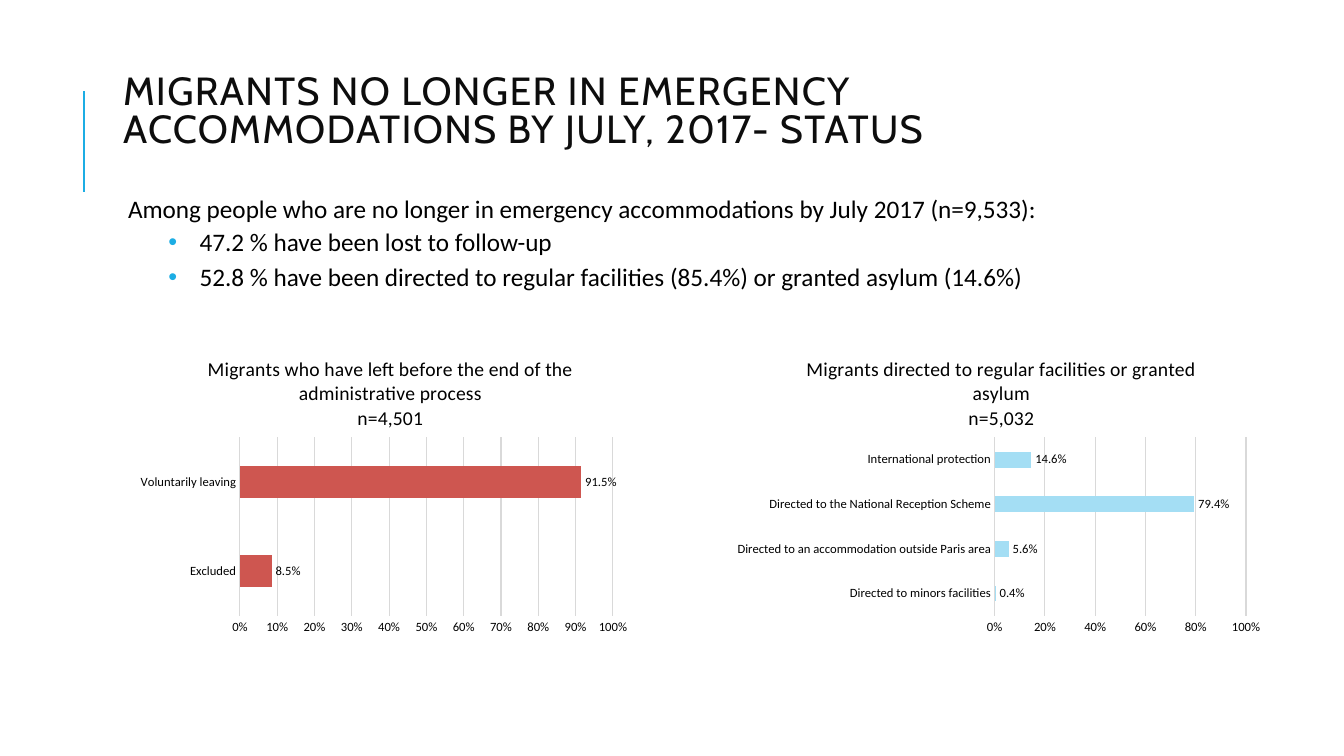
from lxml import etree
from pptx import Presentation
from pptx.chart.data import CategoryChartData
from pptx.dml.color import RGBColor
from pptx.enum.chart import XL_CHART_TYPE, XL_LABEL_POSITION, XL_TICK_MARK
from pptx.enum.shapes import MSO_CONNECTOR
from pptx.enum.text import MSO_ANCHOR, PP_ALIGN
from pptx.oxml import parse_xml
from pptx.oxml.ns import nsdecls, qn
from pptx.util import Inches, Pt

BAR = XL_CHART_TYPE.BAR_CLUSTERED
OUTSIDE = XL_LABEL_POSITION.OUTSIDE_END
NO_TICK = XL_TICK_MARK.NONE
STRAIGHT = MSO_CONNECTOR.STRAIGHT
MIDDLE = MSO_ANCHOR.MIDDLE
LEFT = PP_ALIGN.LEFT

BLACK = RGBColor(0x00, 0x00, 0x00)
INK = RGBColor(0x0D, 0x0D, 0x0D)
BLUE = RGBColor(0x1C, 0xAD, 0xE4)
GREY = RGBColor(0xD9, 0xD9, 0xD9)
RED = RGBColor(0xCE, 0x56, 0x50)
SKY = RGBColor(0xA4, 0xDE, 0xF4)


def style(font, size, color=BLACK, name="Calibri"):
    for key, value in {"size": Pt(size), "name": name, "bold": False}.items():
        setattr(font, key, value)
    font.color.rgb = color


def place(parent, **spots):
    """Set a manual layout, in fractions of the chart."""
    old = parent.find(qn("c:layout"))
    if old is not None:
        parent.remove(old)
    layout = parse_xml(f"<c:layout {nsdecls('c')}><c:manualLayout/></c:layout>")
    for tag, value in spots.items():
        etree.SubElement(layout[0], qn(f"c:{tag}")).set("val", str(value))
    text = parent.find(qn("c:tx"))
    parent.insert(0 if text is None else 1, layout)


prs = Presentation()
prs.slide_width, prs.slide_height = Inches(13.33), Inches(7.5)
slide = prs.slides.add_slide(prs.slide_layouts[5])

# Accent line beside the title
rule = slide.shapes.add_connector(
    STRAIGHT, Inches(0.83), Inches(1.9), Inches(0.83), Inches(0.9))
rule.line.color.rgb = BLUE
rule.line.width = Pt(1.5)
etree.SubElement(rule._element.spPr, qn("a:effectLst"))

# Title
title = slide.shapes.title
title.left, title.top = Inches(1.12), Inches(0.64)
title.width, title.height = Inches(11.12), Inches(0.96)
title.text_frame.text = "MIGRANTS NO LONGER IN EMERGENCY ACCOMMODATIONS BY JULY, 2017- STATUS"
title.text_frame.vertical_anchor = MIDDLE
head = title.text_frame.paragraphs[0]
head.alignment = LEFT
head.line_spacing = 0.8
style(head.runs[0].font, 28, INK, "Cabin")
head.runs[0].font._element.set("spc", "100")

# Findings: text, level, left margin, indent, space before, space after
findings = [
    ("Among people who are no longer in emergency accommodations by July 2017 (n=9,533):",
     0, 0.1, 0, 12, 2),
    ("47.2 % have been lost to follow-up", 1, 0.81, -0.31, 2, 4),
    ("52.8 % have been directed to regular facilities (85.4%) or granted asylum (14.6%)",
     1, 0.81, -0.31, 2, 4),
]
body = slide.shapes.add_textbox(
    Inches(1.12), Inches(1.9), Inches(10.63), Inches(5)).text_frame
body.word_wrap = True
for side in ("left", "top", "right", "bottom"):
    setattr(body, f"margin_{side}", Inches(0.05))
for i, (text, level, margin, indent, before, after) in enumerate(findings):
    para = body.add_paragraph() if i else body.paragraphs[0]
    form = {"level": level, "line_spacing": 0.9,
            "space_before": Pt(before), "space_after": Pt(after)}
    for key, value in form.items():
        setattr(para, key, value)
    run = para.add_run()
    run.text = text
    style(run.font, 18)
    props = para._p.get_or_add_pPr()
    props.set("marL", str(Inches(margin)))
    props.set("indent", str(Inches(indent)))
    if level:
        tint = etree.SubElement(props, qn("a:buClr"))
        etree.SubElement(tint, qn("a:srgbClr")).set("val", str(BLUE))
        etree.SubElement(props, qn("a:buFont")).set("typeface", "Arial")
        etree.SubElement(props, qn("a:buChar")).set("char", "•")

# Charts: left, width, color, axis step, title left, plot left, plot width, title, bars
charts = [
    (7.21, 5.42, SKY, 0.2, 0.14, 0.49, 0.46,
     ("Migrants directed to regular facilities or granted asylum", "n=5,032"),
     {"Directed to minors facilities": 0.004,
      "Directed to an accommodation outside Paris area": 0.056,
      "Directed to the National Reception Scheme": 0.794,
      "International protection": 0.146}),
    (1.33, 5, RED, 0.1, 0.14, 0.21, 0.74,
     ("Migrants who have left before the end of the administrative process", "n=4,501"),
     {"Excluded": 0.085, "Voluntarily leaving": 0.915}),
]
for left, width, color, step, start, edge, span, lines, bars in charts:
    data = CategoryChartData(number_format="0.0%")
    data.categories = list(bars)
    data.add_series("Series 1", list(bars.values()))
    chart = slide.shapes.add_chart(
        BAR, Inches(left), Inches(3.35), Inches(width), Inches(3), data).chart
    style(chart.font, 10)
    chart.has_legend = False

    # Chart title
    frame = chart.chart_title.text_frame
    for i, line in enumerate(lines):
        para = frame.add_paragraph() if i else frame.paragraphs[0]
        run = para.add_run()
        run.text = line
        style(run.font, 14)
    chart.chart_title.include_in_layout = False
    place(chart.chart_title._element, xMode="edge", yMode="edge", x=start, y=0.05)

    # Bars and their labels
    plot = chart.plots[0]
    plot.gap_width = 182
    plot.vary_by_categories = False
    fill = plot.series[0].format.fill
    fill.solid()
    fill.fore_color.rgb = color
    plot.has_data_labels = True
    labels = plot.data_labels
    form = {"show_value": True, "position": OUTSIDE,
            "number_format": "0.0%", "number_format_is_linked": False}
    for key, value in form.items():
        setattr(labels, key, value)
    style(labels.font, 9)

    # Axes
    cats, vals = chart.category_axis, chart.value_axis
    for axis in (cats, vals):
        axis.major_tick_mark = axis.minor_tick_mark = NO_TICK
        style(axis.tick_labels.font, 9)
    form = {"minimum_scale": 0, "maximum_scale": 1, "major_unit": step,
            "has_major_gridlines": True}
    for key, value in form.items():
        setattr(vals, key, value)
    vals.tick_labels.number_format = "0%"
    vals.tick_labels.number_format_is_linked = False
    vals.format.line.fill.background()
    for line in (cats.format.line, vals.major_gridlines.format.line):
        line.color.rgb = GREY
        line.width = Pt(0.75)
    place(chart._chartSpace.chart.plotArea, layoutTarget="inner", xMode="edge",
          yMode="edge", x=edge, y=0.33, w=span, h=0.59)

prs.save("out.pptx")
